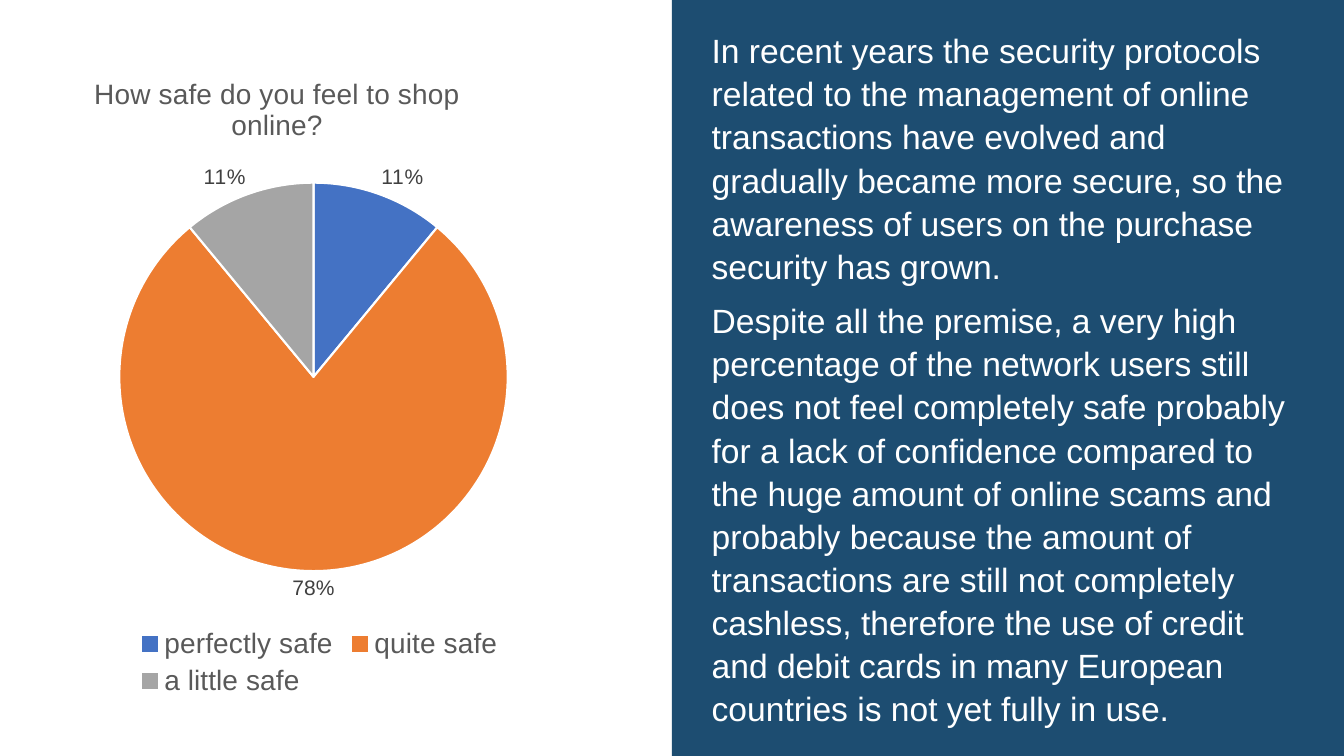
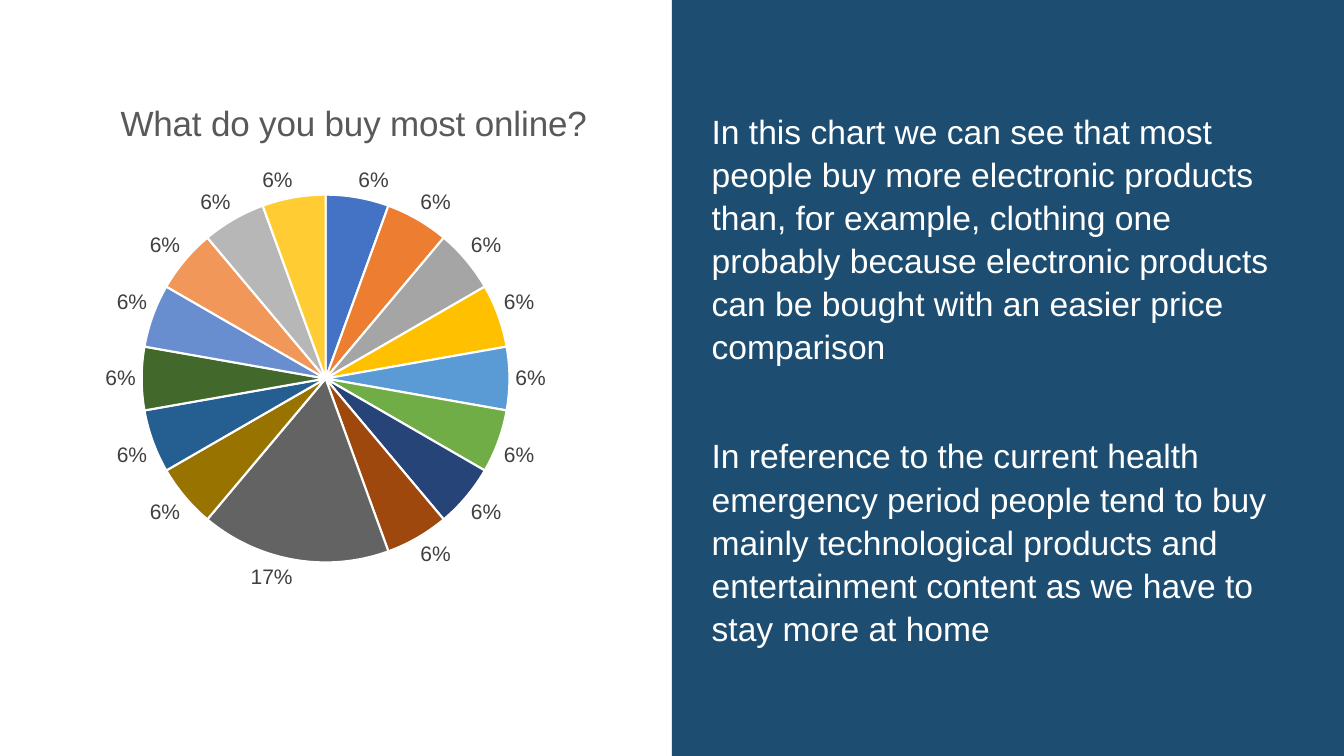
import pptx
import pptx.util
import pptx.chart.data
import pptx.dml.color
import pptx.enum.chart
import pptx.enum.shapes
import pptx.enum.text
import pptx.oxml
from pptx.oxml.ns import nsdecls

Cm, Pt = pptx.util.Cm, pptx.util.Pt
FONT = "Arial"
WIDE, HIGH = 33.87, 19.05
HALF = WIDE / 2
HEX = {"band": "1D4D71", "white": "FFFFFF", "grey": "595959",
       "label": "404040", "black": "000000"}
SLICES = ["4472C4", "ED7D31", "A5A5A5", "FFC000", "5B9BD5", "70AD47",
          "264478", "9E480E", "636363", "997300", "255E91", "43682B",
          "698ED0", "F1975A", "B7B7B7", "FFCD33"]

# Content: box in cm; plot and title spots as shares of the chart
PAGES = [
    {"title": "How safe do you feel to shop online?", "size": 20,
     "spot": (0.11, 0.04),
     "box": (0.61, 1.12, 14.88, 16.59), "plot": (0.16, 0.21, 0.66, 0.59),
     "cats": ["perfectly safe", "quite safe", "a little safe"],
     "vals": [11, 78, 11], "legend": True, "gap": 0,
     "text": [
         "In recent years the security protocols related to the management "
         "of online transactions have evolved and gradually became more "
         "secure, so the awareness of users on the purchase security has "
         "grown.",
         "Despite all the premise, a very high percentage of the network "
         "users still does not feel completely safe probably for a lack of "
         "confidence compared to the huge amount of online scams and "
         "probably because the amount of transactions are still not "
         "completely cashless, therefore the use of credit and debit cards "
         "in many European countries is not yet fully in use."]},
    {"title": "What do you buy most online?", "size": 25,
     "spot": (0.13, 0.07),
     "box": (0.89, 1.22, 15.32, 16.64), "plot": (0.175, 0.22, 0.605, 0.56),
     "cats": [str(n) for n in range(1, 17)],
     "vals": [6] * 8 + [18] + [6] * 7, "legend": False, "gap": 39,
     "text": [
         "In this chart we can see that most people buy more electronic "
         "products than, for example, clothing one probably because "
         "electronic products can be bought with an easier price comparison",
         "In reference to the current health emergency period people tend "
         "to buy mainly technological products and entertainment content as "
         "we have to stay more at home"]},
]


def tint(name):
    return pptx.dml.color.RGBColor.from_string(HEX.get(name, name))


def style(font, size, color):
    font.name, font.size, font.bold = FONT, Pt(size), False
    font.color.rgb = tint(color)


def place(part, spot, inner=False):
    """Set a manual layout on a chart title or plot area."""
    tags = ['<c:layoutTarget val="inner"/>'] if inner else []
    tags += [f'<c:{k}Mode val="edge"/>' for k in "xy"]
    tags += [f'<c:{k} val="{v}"/>' for k, v in zip("xywh", spot)]
    new = pptx.oxml.parse_xml(
        f'<c:layout {nsdecls("c")}><c:manualLayout>{"".join(tags)}'
        '</c:manualLayout></c:layout>')
    for old in part.findall(new.tag):
        part.remove(old)
    # In a title the layout follows the text; in a plot area it is first
    part.insert(0 if inner else 1, new)


def add_band(slide, page):
    band = slide.shapes.add_shape(
        pptx.enum.shapes.MSO_SHAPE.RECTANGLE,
        Cm(HALF), 0, Cm(HALF), Cm(HIGH))
    band.shadow.inherit = False
    band.fill.solid()
    band.fill.fore_color.rgb = tint("band")
    band.line.fill.background()
    frame = band.text_frame
    frame.word_wrap = True
    frame.vertical_anchor = pptx.enum.text.MSO_ANCHOR.MIDDLE
    frame.margin_left = frame.margin_right = Cm(1)
    for i, text in enumerate(page["text"]):
        para = frame.add_paragraph() if i else frame.paragraphs[0]
        para.text = text
        para.alignment = pptx.enum.text.PP_ALIGN.LEFT
        para.line_spacing = 1.07
        para.space_after = Pt(8)
        if i and page["gap"]:
            para.space_before = Pt(page["gap"])
        style(para.font, 24, "white")


def add_pie(slide, page):
    data = pptx.chart.data.CategoryChartData()
    data.categories = page["cats"]
    data.add_series("Series 1", page["vals"])
    chart = slide.shapes.add_chart(
        pptx.enum.chart.XL_CHART_TYPE.PIE,
        *[Cm(n) for n in page["box"]], data).chart
    style(chart.font, 10, "black")

    # Title
    title = chart.chart_title
    para = title.text_frame.paragraphs[0]
    para.text = page["title"]
    style(para.font, page["size"], "grey")
    place(title._element, page["spot"])

    # Slices and labels
    plot = chart.plots[0]
    plot.vary_by_categories = True
    for i in range(len(page["vals"])):
        form = plot.series[0].points[i].format
        form.fill.solid()
        form.fill.fore_color.rgb = tint(SLICES[i])
        form.line.color.rgb = tint("white")
        form.line.width = Pt(1.5)
    labels = plot.series[0].data_labels
    labels.show_percentage, labels.show_value = True, False
    labels.number_format, labels.number_format_is_linked = "0%", False
    labels.position = pptx.enum.chart.XL_LABEL_POSITION.OUTSIDE_END
    style(labels.font, 15, "label")
    place(chart._chartSpace.chart.plotArea, page["plot"], inner=True)

    # Legend
    chart.has_legend = page["legend"]
    if page["legend"]:
        chart.legend.position = pptx.enum.chart.XL_LEGEND_POSITION.BOTTOM
        chart.legend.include_in_layout = False
        style(chart.legend.font, 20, "grey")


def main():
    deck = pptx.Presentation()
    deck.slide_width, deck.slide_height = Cm(WIDE), Cm(HIGH)
    for page in PAGES:
        slide = deck.slides.add_slide(deck.slide_layouts[6])
        add_band(slide, page)
        add_pie(slide, page)
    deck.save("out.pptx")


if __name__ == "__main__":
    main()
